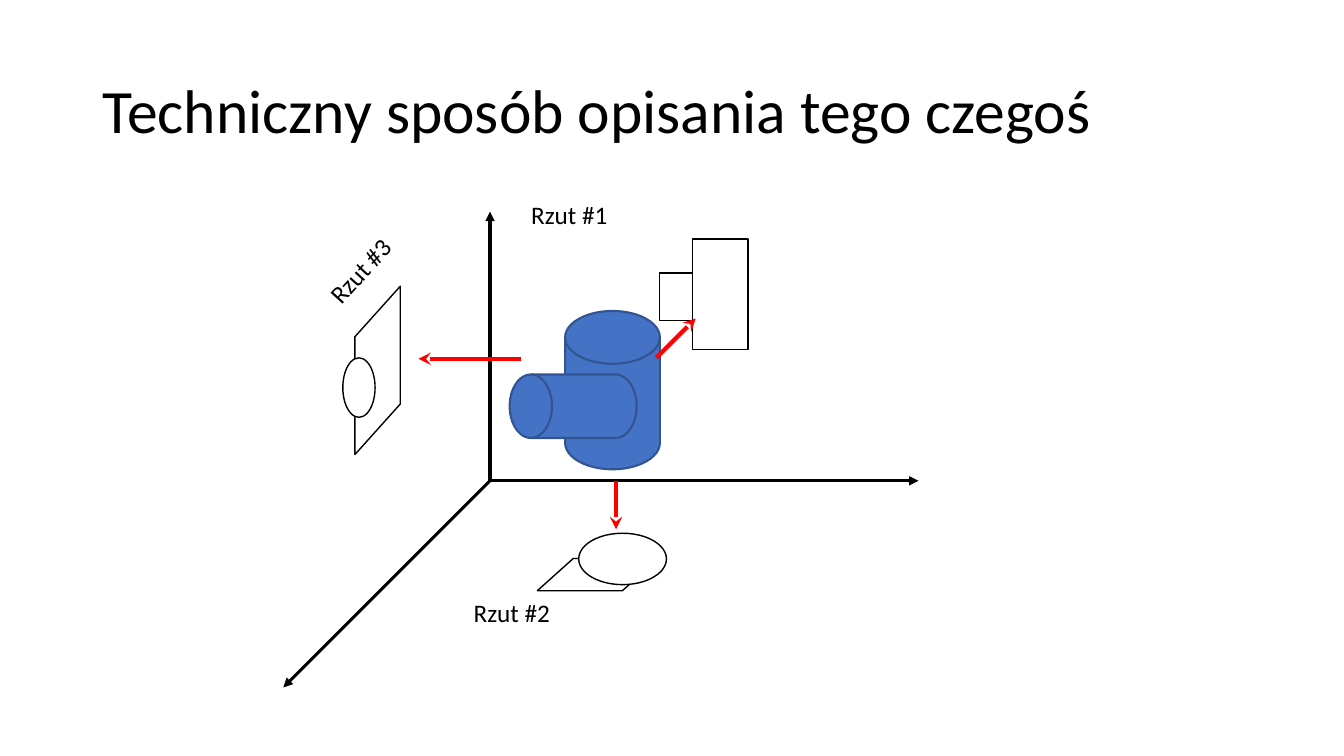
from lxml.etree import SubElement
from pptx import Presentation
from pptx.dml.color import RGBColor
from pptx.enum.shapes import MSO_CONNECTOR, MSO_SHAPE
from pptx.enum.text import MSO_ANCHOR
from pptx.oxml.ns import qn
from pptx.util import Inches, Pt

BLACK = RGBColor(0x00, 0x00, 0x00)
WHITE = RGBColor(0xFF, 0xFF, 0xFF)
RED = RGBColor(0xFF, 0x00, 0x00)
BLUE = RGBColor(0x44, 0x72, 0xC4)
DARK_BLUE = RGBColor(0x32, 0x54, 0x91)


class ProjectionSlide:
    font = "Calibri"
    cell = Inches(0.1)

    def __init__(self, presentation):
        self.shapes = presentation.slides.add_slide(presentation.slide_layouts[6]).shapes

    def grid(self, *cells):
        return [round(count * self.cell) for count in cells]

    def text(self, words, box, size=18, rotation=0, anchor=MSO_ANCHOR.TOP, spacing=1.0):
        shape = self.shapes.add_textbox(*self.grid(*box))
        shape.rotation = rotation
        frame = shape.text_frame
        frame.word_wrap = True
        frame.vertical_anchor = anchor
        paragraph = frame.paragraphs[0]
        paragraph.line_spacing = spacing
        run = paragraph.add_run()
        run.text = words
        run.font.name = self.font
        run.font.size = Pt(size)
        run.font.color.rgb = BLACK

    def outline(self, kind, box, fill=WHITE, line=BLACK, width=1, rotation=0):
        shape = self.shapes.add_shape(kind, *self.grid(*box))
        shape.shadow.inherit = False
        shape.rotation = rotation
        shape.fill.solid()
        shape.fill.fore_color.rgb = fill
        shape.line.color.rgb = line
        shape.line.width = Pt(width)
        return shape

    def parallelogram(self, box, rotation=0, flipped=False):
        shape = self.outline(MSO_SHAPE.PARALLELOGRAM, box, rotation=rotation)
        shape.adjustments[0] = 1.114
        if flipped:
            shape._element.spPr.find(qn("a:xfrm")).set("flipV", "1")

    def cylinder(self, kind, box):
        self.outline(kind, box, BLUE, DARK_BLUE, 1.5, 270)

    def arrow(self, start, end, color, width, head):
        connector = self.shapes.add_connector(
            MSO_CONNECTOR.STRAIGHT, *self.grid(*start, *end))
        connector.line.color.rgb = color
        connector.line.width = Pt(width)
        properties = connector._element.spPr
        SubElement(properties.find(qn("a:ln")), qn("a:tailEnd"), type=head)
        SubElement(properties, qn("a:effectLst"))

    def axis(self, start, end):
        self.arrow(start, end, BLACK, 2.25, "triangle")

    def projection_arrow(self, start, end):
        self.arrow(start, end, RED, 3, "stealth")


def main():
    presentation = Presentation()
    presentation.slide_width = Inches(13.33)
    presentation.slide_height = Inches(7.5)
    slide = ProjectionSlide(presentation)

    slide.text("Techniczny sposób opisania tego czegoś", (9.2, 4, 115, 14.5),
               size=44, anchor=MSO_ANCHOR.MIDDLE, spacing=0.9)

    origin = (48.6, 47.7)
    for axis_end in ((91.1, 47.7), (48.6, 21), (28.1, 68.2)):
        slide.axis(origin, axis_end)

    slide.outline(MSO_SHAPE.RECTANGLE, (65.4, 27.1, 4.8, 4.7))
    slide.outline(MSO_SHAPE.RECTANGLE, (68.7, 23.7, 5.5, 11))
    slide.parallelogram((29.1, 34.5, 16.7, 4.5), rotation=90, flipped=True)
    slide.outline(MSO_SHAPE.OVAL, (34, 35.5, 3.2, 5.9))

    slide.text("Rzut #1", (51.7, 19.3, 52.7, 4))
    slide.text("Rzut #3", (29.8, 22.3, 16.5, 4), rotation=312.5)
    slide.text("Rzut #2", (46, 58.8, 27.3, 4))

    slide.parallelogram((53.3, 55.4, 12, 3.2))
    slide.cylinder(MSO_SHAPE.FLOWCHART_DIRECT_ACCESS_STORAGE, (52.9, 34, 15.7, 9.4))
    slide.cylinder(MSO_SHAPE.FLOWCHART_MAGNETIC_DISK, (53.7, 34, 6.3, 12.6))

    slide.projection_arrow((65.1, 35.5), (69, 31.6))
    slide.projection_arrow((51.7, 35.6), (41.5, 35.6))
    slide.outline(MSO_SHAPE.OVAL, (57.4, 52.9, 8.7, 5.1))
    slide.projection_arrow((61.1, 47.7), (61.1, 52.5))

    presentation.save("out.pptx")


if __name__ == "__main__":
    main()
